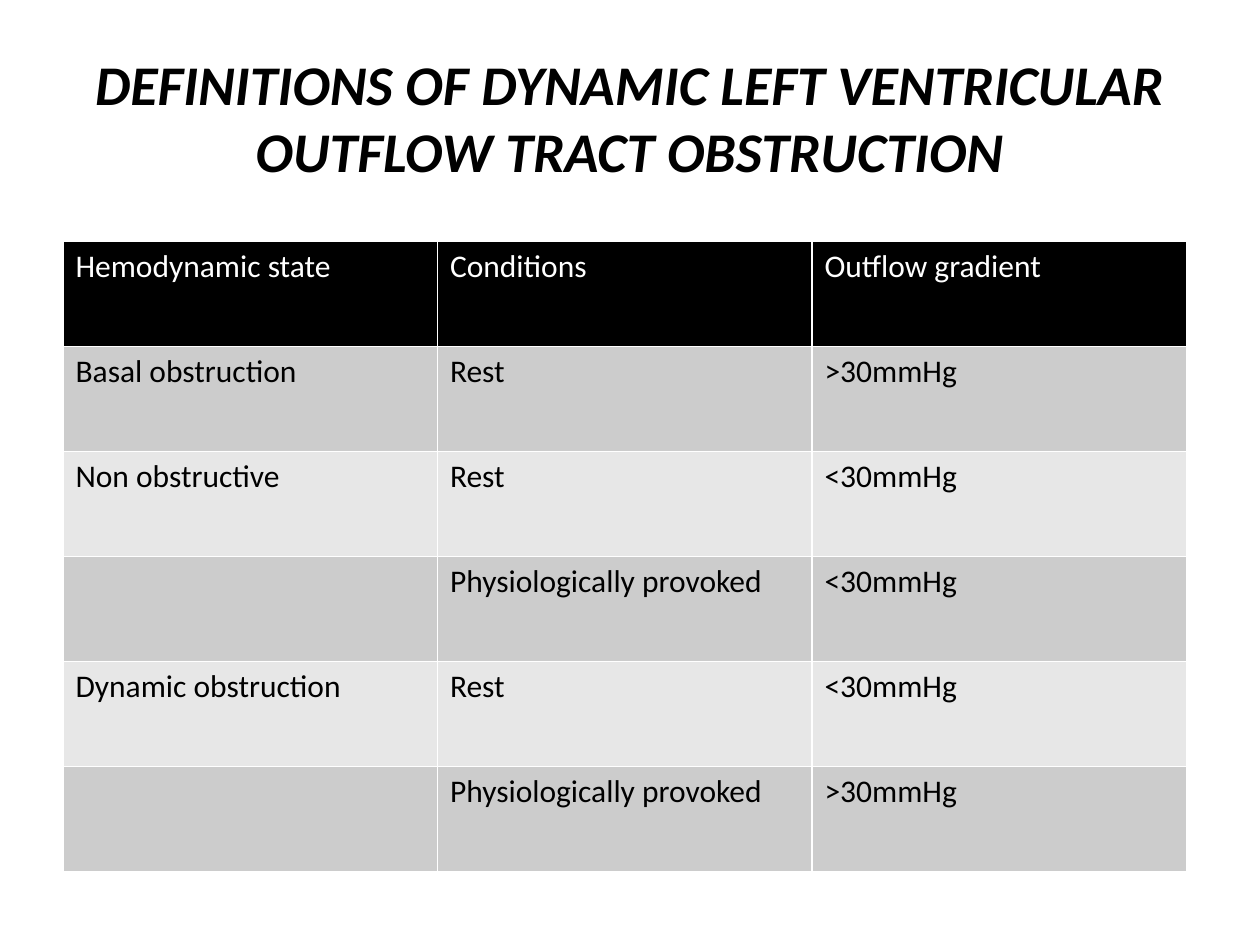
from pptx import Presentation
from pptx.dml.color import RGBColor
from pptx.enum.text import MSO_ANCHOR, PP_ALIGN
from pptx.util import Pt

CENTER = PP_ALIGN.CENTER
MIDDLE = MSO_ANCHOR.MIDDLE

BLACK = RGBColor(0x00, 0x00, 0x00)
WHITE = RGBColor(0xFF, 0xFF, 0xFF)
DARK_BAND = RGBColor(0xCC, 0xCC, 0xCC)
LIGHT_BAND = RGBColor(0xE7, 0xE7, 0xE7)

FONT = "Calibri"
TITLE_ONLY = 5
COLUMN_WIDTH = 214
ROW_HEIGHT = 60

HEADING = "DEFINITIONS OF DYNAMIC LEFT VENTRICULAR OUTFLOW TRACT OBSTRUCTION"
DEFINITIONS = [
    ("Hemodynamic state", "Conditions", "Outflow gradient"),
    ("Basal obstruction", "Rest", ">30mmHg"),
    ("Non obstructive", "Rest", "<30mmHg"),
    ("", "Physiologically provoked", "<30mmHg"),
    ("Dynamic obstruction", "Rest", "<30mmHg"),
    ("", "Physiologically provoked", ">30mmHg"),
]


def write(text_frame, text, size, color, bold=False, italic=False):
    text_frame.text = text
    paragraph = text_frame.paragraphs[0]
    for run in paragraph.runs:
        font = run.font
        font.name, font.size = FONT, Pt(size)
        font.bold, font.italic = bold, italic
        font.color.rgb = color
    return paragraph


def add_heading(slide):
    heading = slide.shapes.title
    heading.left, heading.top = Pt(36), Pt(21.6)
    heading.width, heading.height = Pt(648), Pt(90)
    heading.text_frame.vertical_anchor = MIDDLE
    paragraph = write(heading.text_frame, HEADING, 32, BLACK, bold=True, italic=True)
    paragraph.alignment = CENTER


def row_colors(row_index):
    """Return the fill and text colours of a table row."""
    if row_index == 0:
        return BLACK, WHITE
    return (DARK_BAND if row_index % 2 else LIGHT_BAND), BLACK


def add_definitions(slide):
    """Add the table; its default style supplies the white cell borders."""
    row_count, column_count = len(DEFINITIONS), len(DEFINITIONS[0])
    table = slide.shapes.add_table(
        row_count, column_count, Pt(36), Pt(138),
        Pt(COLUMN_WIDTH * column_count), Pt(ROW_HEIGHT * row_count),
    ).table
    for row_index, entries in enumerate(DEFINITIONS):
        fill_color, text_color = row_colors(row_index)
        for column_index, entry in enumerate(entries):
            cell = table.cell(row_index, column_index)
            cell.fill.solid()
            cell.fill.fore_color.rgb = fill_color
            write(cell.text_frame, entry, 18, text_color)


def main():
    presentation = Presentation()
    presentation.slide_width, presentation.slide_height = Pt(720), Pt(540)
    slide = presentation.slides.add_slide(presentation.slide_layouts[TITLE_ONLY])
    add_heading(slide)
    add_definitions(slide)
    presentation.save("out.pptx")


if __name__ == "__main__":
    main()
